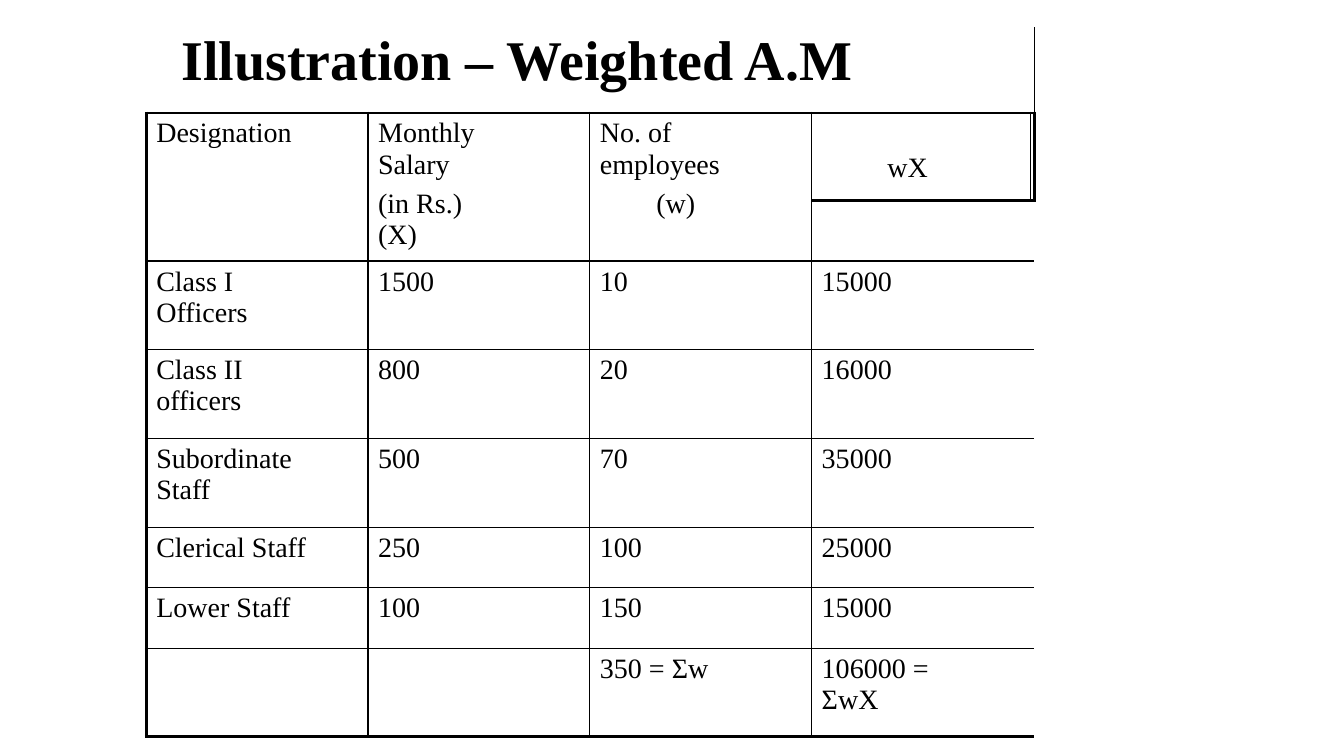
from dataclasses import dataclass

from lxml.etree import SubElement
from pptx import Presentation
from pptx.dml.color import RGBColor
from pptx.oxml.ns import qn
from pptx.table import Table, _Cell
from pptx.util import Inches, Pt

BLACK = "000000"
NO_STYLE = "{2D5ABB26-0587-4C30-8999-92F81FD0307C}"
THIN, INNER, OUTER = 0.75, 1, 2.25
COLUMN_WIDTHS = [2.2, 2.2, 2.2, 2.17, 0.03]
ROW_HEIGHTS = [0.85, 0.87, 0.6, 0.88, 0.88, 0.88, 0.6, 0.6, 0.88]
LAST_ROW, LAST_COLUMN = len(ROW_HEIGHTS) - 1, len(COLUMN_WIDTHS) - 1


@dataclass
class Line:
    text: str
    indent: float = 0
    space_before: float = 0


@dataclass
class Area:
    """One visible cell, covering one or more grid cells."""
    row: int
    column: int
    lines: list[Line]
    rows: int = 1
    columns: int = 1
    left: float = 0.1
    top: float = 0.05
    size: float = 20
    bold: bool = False

    @property
    def last_row(self) -> int:
        return self.row + self.rows - 1

    @property
    def last_column(self) -> int:
        return self.column + self.columns - 1


HEADER_AREAS = [
    Area(0, 0, [Line("Illustration – Weighted A.M")], columns=4,
         left=0.35, top=0.03, size=40, bold=True),
    Area(0, 4, [], left=0),
    Area(1, 0, [Line("Designation")], rows=2),
    Area(1, 1, [Line("Monthly\vSalary"), Line("(in Rs.)\v(X)", space_before=6)], rows=2),
    Area(1, 2, [Line("No. of\vemployees"), Line("(w)", 0.56, 6)], rows=2),
    Area(1, 3, [Line("wX")], left=0.75, top=0.39),
    Area(1, 4, [], left=0),
    Area(2, 3, [], columns=2),
]

BODY_ROWS = [
    ("Class I\vOfficers", "1500", "10", "15000"),
    ("Class II\vofficers", "800", "20", "16000"),
    ("Subordinate\vStaff", "500", "70", "35000"),
    ("Clerical Staff", "250", "100", "25000"),
    ("Lower Staff", "100", "150", "15000"),
    ("", "", "350 = Σw", "106000 =\nΣwX"),
]


def color(value: str) -> RGBColor:
    return RGBColor.from_string(value)


def body_areas() -> list[Area]:
    return [
        Area(row, column, [Line(part) for part in text.split("\n") if part],
             columns=2 if column == 3 else 1)
        for row, texts in enumerate(BODY_ROWS, start=3)
        for column, text in enumerate(texts)
    ]


def border_widths(area: Area) -> dict[str, float]:
    """Give the width in points of each drawn edge of an area."""
    if area.row == 0:
        return {"R": THIN, "B": OUTER}
    at_total_heading = area.column >= 3
    narrow = area.row == 1 and area.column == LAST_COLUMN
    widths = {
        "L": OUTER if area.column == 0 else THIN if narrow else INNER,
        "R": OUTER if area.last_column == LAST_COLUMN else INNER,
        "T": OUTER if area.row == 1 else INNER,
        "B": OUTER if area.last_row == LAST_ROW else INNER,
    }
    if at_total_heading and area.row == 1:
        widths["B"] = OUTER
        if not narrow:
            widths["R"] = THIN
    if at_total_heading and area.row == 2:
        widths["T"] = OUTER
    return widths


def draw_borders(cell: _Cell, widths: dict[str, float]) -> None:
    properties = cell._tc.get_or_add_tcPr()
    for side in "LRTB":
        width = widths.get(side, 0)
        line = SubElement(properties, qn(f"a:ln{side}"), w=str(Pt(width)))
        if width:
            fill = SubElement(line, qn("a:solidFill"))
            SubElement(fill, qn("a:srgbClr"), val=BLACK)
        else:
            SubElement(line, qn("a:noFill"))


def write_lines(cell: _Cell, area: Area) -> None:
    frame = cell.text_frame
    for index, line in enumerate(area.lines):
        paragraph = frame.paragraphs[0] if index == 0 else frame.add_paragraph()
        paragraph.text = line.text
        if line.indent:
            paragraph._p.get_or_add_pPr().set("marL", str(Inches(line.indent)))
        if line.space_before:
            paragraph.space_before = Pt(line.space_before)
        for run in paragraph.runs:
            values = {"name": "Times New Roman", "size": Pt(area.size), "bold": area.bold}
            for name, value in values.items():
                setattr(run.font, name, value)
            run.font.color.rgb = color(BLACK)


def draw_area(table: Table, area: Area) -> None:
    first = table.cell(area.row, area.column)
    if area.rows * area.columns > 1:
        first.merge(table.cell(area.last_row, area.last_column))
    margins = {"margin_left": area.left, "margin_top": area.top,
               "margin_right": 0, "margin_bottom": 0}
    for name, value in margins.items():
        setattr(first, name, Inches(value))
    write_lines(first, area)

    widths = border_widths(area)
    for row in range(area.row, area.last_row + 1):
        for column in range(area.column, area.last_column + 1):
            on_edge = {"L": column == area.column, "R": column == area.last_column,
                       "T": row == area.row, "B": row == area.last_row}
            cell = table.cell(row, column)
            draw_borders(cell, {side: width for side, width in widths.items()
                                if on_edge[side]})
            cell.fill.background()


def add_salary_table(slide) -> None:
    frame = slide.shapes.add_table(
        len(ROW_HEIGHTS), len(COLUMN_WIDTHS), Inches(1.45), Inches(0.27),
        Inches(sum(COLUMN_WIDTHS)), Inches(sum(ROW_HEIGHTS)))
    table = frame.table
    table._tbl.tblPr.find(qn("a:tableStyleId")).text = NO_STYLE
    table.first_row = table.horz_banding = False
    for column, width in zip(table.columns, COLUMN_WIDTHS):
        column.width = Inches(width)
    for row, height in zip(table.rows, ROW_HEIGHTS):
        row.height = Inches(height)
    for area in HEADER_AREAS + body_areas():
        draw_area(table, area)


def main() -> None:
    presentation = Presentation()
    presentation.slide_width = Inches(13.33)
    presentation.slide_height = Inches(7.5)
    slide = presentation.slides.add_slide(presentation.slide_layouts[6])
    add_salary_table(slide)
    presentation.save("out.pptx")


if __name__ == "__main__":
    main()
